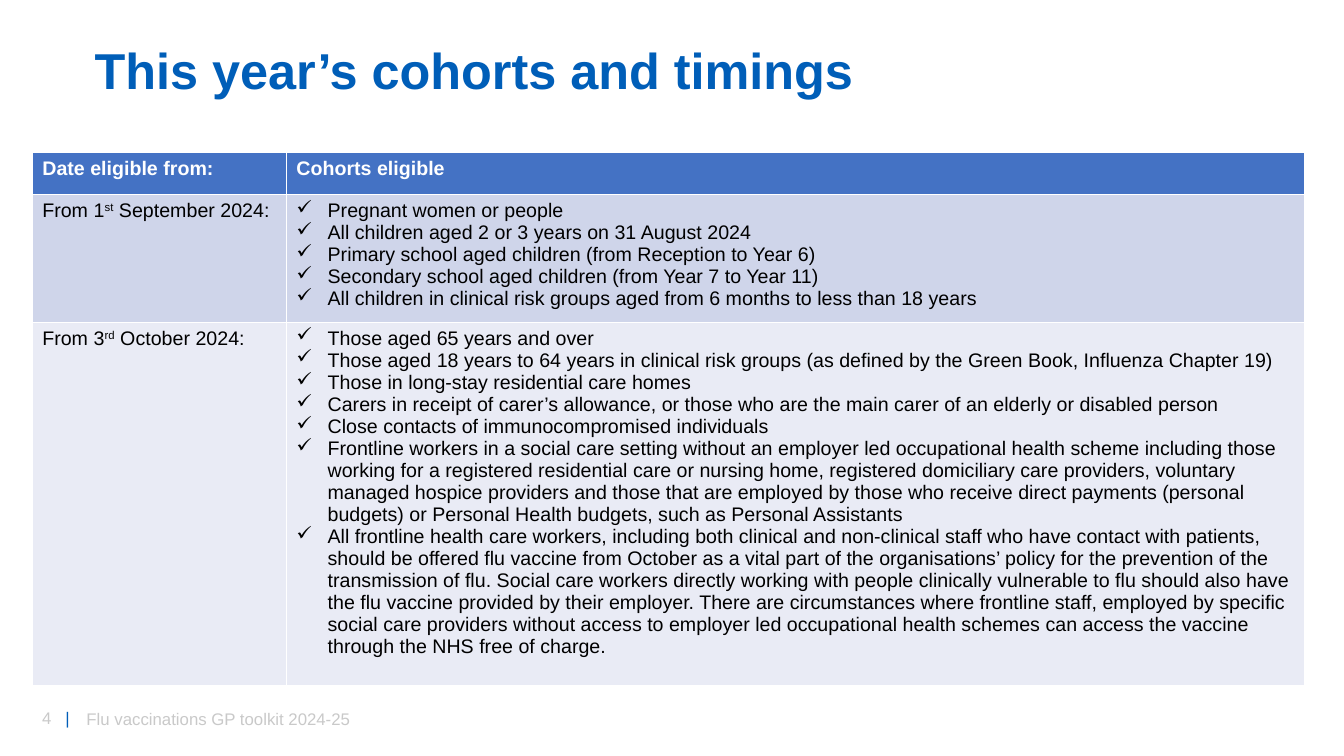
from lxml.etree import SubElement
from pptx import Presentation
from pptx.dml.color import RGBColor
from pptx.enum.text import MSO_ANCHOR as Anchor
from pptx.oxml.ns import qn
from pptx.util import Inches, Pt

BLUE = RGBColor(0x00, 0x5E, 0xB8)
HEAD = RGBColor(0x44, 0x72, 0xC4)
BANDS = [RGBColor(0xCF, 0xD5, 0xEA), RGBColor(0xE9, 0xEB, 0xF5)]
GREY = RGBColor(0xC9, 0xC9, 0xC9)
WHITE = RGBColor(0xFF, 0xFF, 0xFF)
BLACK = RGBColor(0x00, 0x00, 0x00)

COHORTS = [
    (("From 1", "st", " September 2024:"), [
        "Pregnant women or people",
        "All children aged 2 or 3 years on 31 August 2024",
        "Primary school aged children (from Reception to Year 6)",
        "Secondary school aged children (from Year 7 to Year 11)",
        "All children in clinical risk groups aged from 6 months to less than 18 years",
    ]),
    (("From 3", "rd", " October 2024:"), [
        "Those aged 65 years and over",
        "Those aged 18 years to 64 years in clinical risk groups "
        "(as defined by the Green Book, Influenza Chapter 19)",
        "Those in long-stay residential care homes",
        "Carers in receipt of carer’s allowance, or those who are the main carer "
        "of an elderly or disabled person",
        "Close contacts of immunocompromised individuals",
        "Frontline workers in a social care setting without an employer led occupational "
        "health scheme including those working for a registered residential care or nursing "
        "home, registered domiciliary care providers, voluntary managed hospice providers "
        "and those that are employed by those who receive direct payments (personal budgets) "
        "or Personal Health budgets, such as Personal Assistants",
        "All frontline health care workers, including both clinical and non-clinical staff "
        "who have contact with patients, should be offered flu vaccine from October as a "
        "vital part of the organisations’ policy for the prevention of the transmission of "
        "flu. Social care workers directly working with people clinically vulnerable to flu "
        "should also have the flu vaccine provided by their employer. There are circumstances "
        "where frontline staff, employed by specific social care providers without access to "
        "employer led occupational health schemes can access the vaccine through the NHS "
        "free of charge.",
    ]),
]


def style(run, size, color, bold=False):
    font = run.font
    font.name, font.size, font.bold = "Arial", Pt(size), bold
    font.color.rgb = color


def add_text(text, left, top, width, height, size, color, bold=False):
    """Add a one-line text box and return its paragraph."""
    box = slide.shapes.add_textbox(*map(Inches, (left, top, width, height)))
    frame = box.text_frame
    frame.word_wrap = True
    frame.vertical_anchor = Anchor.MIDDLE
    frame.text = text
    para = frame.paragraphs[0]
    style(para.runs[0], size, color, bold)
    return para


prs = Presentation()
prs.slide_width, prs.slide_height = Inches(13.33), Inches(7.5)
slide = prs.slides.add_slide(prs.slide_layouts[6])

# Title and footer
title = add_text("This year’s cohorts and timings", 0.84, 0.39, 11.64, 0.67, 36, BLUE, True)
title.line_spacing = 0.9
add_text("Flu vaccinations GP toolkit 2024-25", 0.76, 6.93, 6.26, 0.4, 12, GREY)
number = add_text("4\t", 0.32, 6.97, 0.71, 0.3, 12, GREY)
tabs = SubElement(number._p.get_or_add_pPr(), qn("a:tabLst"))
SubElement(tabs, qn("a:tab"), pos=str(Inches(0.23)), algn="l")
bar = number.add_run()
bar.text = "|"
style(bar, 12, BLUE)

# Table
table = slide.shapes.add_table(
    3, 2, Inches(0.32), Inches(1.51), Inches(12.62), Inches(5)).table
for col, width in zip(table.columns, (2.52, 10.1)):
    col.width = Inches(width)
for row, height in zip(table.rows, (0.42, 1.2, 3.38)):
    row.height = Inches(height)

for cell, text in zip(table.rows[0].cells, ("Date eligible from:", "Cohorts eligible")):
    cell.text = text
    cell.fill.solid()
    cell.fill.fore_color.rgb = HEAD
    style(cell.text_frame.paragraphs[0].runs[0], 14, WHITE, True)

for r, (date, groups) in enumerate(COHORTS):
    when, who = table.rows[r + 1].cells
    for cell in (when, who):
        cell.fill.solid()
        cell.fill.fore_color.rgb = BANDS[r]

    para = when.text_frame.paragraphs[0]
    for part in date:
        run = para.add_run()
        run.text = part
        style(run, 14, BLACK)
    para.runs[1]._r.get_or_add_rPr().set("baseline", "30000")

    who.text = "\n".join(groups)
    for para in who.text_frame.paragraphs:
        props = para._p.get_or_add_pPr()
        props.set("marL", str(Inches(0.31)))
        props.set("indent", str(-Inches(0.31)))
        SubElement(props, qn("a:buFont"), typeface="Wingdings")
        SubElement(props, qn("a:buChar"), char="ü")
        style(para.runs[0], 14, BLACK)

prs.save("out.pptx")
